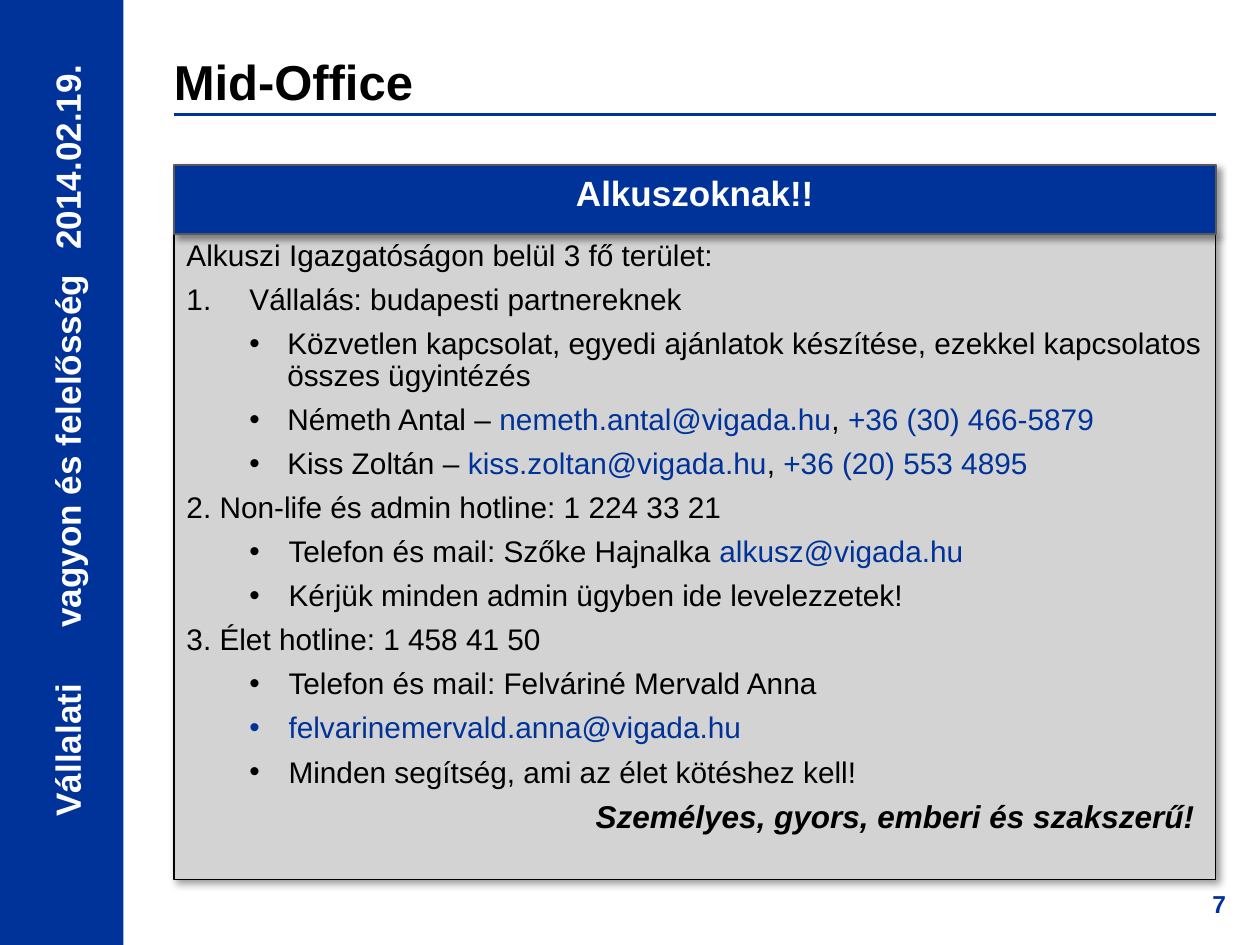
from lxml import etree
from pptx import Presentation
from pptx.dml.color import RGBColor
from pptx.enum.shapes import MSO_CONNECTOR, MSO_SHAPE
from pptx.enum.text import MSO_ANCHOR, MSO_AUTO_SIZE, PP_ALIGN
from pptx.oxml.ns import qn
from pptx.util import Inches, Pt

LEFT, CENTER, RIGHT = PP_ALIGN.LEFT, PP_ALIGN.CENTER, PP_ALIGN.RIGHT
TOP, MIDDLE = MSO_ANCHOR.TOP, MSO_ANCHOR.MIDDLE
COLORS = {"blue": "003399", "white": "FFFFFF", "black": "000000",
          "panel": "D3D3D3", "edge": "595959"}
FONT = "Arial"

TITLE = "Mid-Office"
SIDEBAR = "Vállalati\tvagyon és felelősség\t2014.02.19."
HEADER = "Alkuszoknak!!"
PAGE = "7"
CLOSING = "Személyes, gyors, emberi és szakszerű! "
# Each line: bullet indent (0 for none), then runs; odd runs are contacts.
LINES = [
    (0, ["Alkuszi Igazgatóságon belül 3 fő terület:"]),
    (0, ["1.\tVállalás: budapesti partnereknek"]),
    (0.8, ["Közvetlen kapcsolat, egyedi ajánlatok készítése, ezekkel "
           "kapcsolatos összes ügyintézés"]),
    (0.8, ["Németh Antal – ", "nemeth.antal@vigada.hu", ", ", "+36 (30) 466-5879"]),
    (0.8, ["Kiss Zoltán – ", "kiss.zoltan@vigada.hu", ", ", "+36 (20) 553 4895"]),
    (0, ["2. Non-life és admin hotline: 1 224 33 21"]),
    (0.81, ["Telefon és mail: Szőke Hajnalka ", "alkusz@vigada.hu"]),
    (0.81, ["Kérjük minden admin ügyben ide levelezzetek!"]),
    (0, ["3. Élet hotline: 1 458 41 50"]),
    (0.81, ["Telefon és mail: Felváriné Mervald Anna"]),
    (0.81, ["", "felvarinemervald.anna@vigada.hu"]),
    (0.81, ["Minden segítség, ami az élet kötéshez kell!"]),
]

CONTENT_LEFT, CONTENT_WIDTH = 1.38, 8.27
HEADER_TOP, HEADER_HEIGHT, PANEL_HEIGHT = 1.31, 0.55, 5.12


def rgb(name):
    return RGBColor.from_string(COLORS[name])


def place(shape, left, top, width, height):
    shape.left, shape.top = Inches(left), Inches(top)
    shape.width, shape.height = Inches(width), Inches(height)


def paint(shape, fill, edge=None, weight=0):
    shape.fill.solid()
    shape.fill.fore_color.rgb = rgb(fill)
    if edge:
        shape.line.color.rgb = rgb(edge)
        shape.line.width = Pt(weight)
    else:
        shape.line.fill.background()


def cast_shadow(shape):
    effects = etree.SubElement(shape._element.spPr, qn("a:effectLst"))
    shadow = etree.SubElement(effects, qn("a:outerShdw"), blurRad=str(Pt(4)),
                              dist=str(Pt(3)), dir=str(45 * 60000),
                              algn="tl", rotWithShape="0")
    tint = etree.SubElement(shadow, qn("a:srgbClr"), val=COLORS["black"])
    etree.SubElement(tint, qn("a:alpha"), val="40000")


def set_layout(paragraph, margin=0, hanging=0, bullet=False, tabs=()):
    props = paragraph._p.get_or_add_pPr()
    props.set("marL", str(Inches(margin)))
    props.set("indent", str(-Inches(hanging)))
    if bullet:
        etree.SubElement(props, qn("a:buFont"), typeface=FONT)
        etree.SubElement(props, qn("a:buChar"), char="•")
    else:
        etree.SubElement(props, qn("a:buNone"))
    if tabs:
        stops = etree.SubElement(props, qn("a:tabLst"))
        for stop in tabs:
            etree.SubElement(stops, qn("a:tab"), pos=str(Inches(stop)), algn="l")


def set_font(paragraph, size, color=None, bold=False, italic=False):
    font = paragraph.font
    font.name, font.size, font.bold, font.italic = FONT, Pt(size), bold, italic
    if color:
        font.color.rgb = rgb(color)


def write(shape, text, size, color, align, anchor, tabs=()):
    frame = shape.text_frame
    frame.word_wrap = True
    frame.auto_size = MSO_AUTO_SIZE.NONE
    frame.vertical_anchor = anchor
    paragraph = frame.paragraphs[0]
    paragraph.add_run().text = text
    paragraph.alignment = align
    set_layout(paragraph, tabs=tabs)
    set_font(paragraph, size, color, bold=True)


def space(paragraph, size, first=False):
    paragraph.line_spacing = 0.9
    paragraph.space_before = Pt(0 if first else size * 0.2)
    paragraph.space_after = Pt(size * 0.2)


def fill_panel(frame):
    frame.word_wrap = True
    frame.auto_size = MSO_AUTO_SIZE.NONE
    frame.vertical_anchor = TOP
    for index, (margin, runs) in enumerate(LINES):
        paragraph = frame.add_paragraph() if index else frame.paragraphs[0]
        tabs = [0.33] if "\t" in runs[0] else []
        set_layout(paragraph, margin, margin and margin - 0.5, bool(margin), tabs)
        space(paragraph, 17, first=index == 0)
        set_font(paragraph, 17)
        for position, text in enumerate(runs):
            if text:
                run = paragraph.add_run()
                run.text = text
                run.font.color.rgb = rgb("blue" if position % 2 else "black")
    closing = frame.add_paragraph()
    closing.add_run().text = CLOSING
    closing.alignment = RIGHT
    set_layout(closing)
    space(closing, 18)
    set_font(closing, 18, "black", bold=True, italic=True)


def main():
    deck = Presentation()
    deck.slide_width, deck.slide_height = Inches(10), Inches(7.5)
    slide = deck.slides.add_slide(deck.slide_layouts[1])
    shapes = slide.shapes

    title = shapes.title
    place(title, 1.28, 0.36, 7.42, 0.79)
    write(title, TITLE, 28, "black", LEFT, TOP)

    panel = slide.placeholders[1]
    place(panel, CONTENT_LEFT, HEADER_TOP + HEADER_HEIGHT, CONTENT_WIDTH, PANEL_HEIGHT)
    paint(panel, "panel", "black", 0.75)
    cast_shadow(panel)
    fill_panel(panel.text_frame)

    band = shapes.add_shape(MSO_SHAPE.RECTANGLE, 0, 0, Inches(0.98), deck.slide_height)
    paint(band, "blue")
    band.shadow.inherit = False

    sidebar = shapes.add_textbox(0, 0, 0, 0)
    place(sidebar, -2.92, 3.36, 6.9, 0.44)
    sidebar.rotation = 270
    write(sidebar, SIDEBAR, 20, "white", LEFT, MIDDLE, tabs=[1.21, 4.33])
    sidebar.text_frame.margin_left = Inches(0.55)

    rule = shapes.add_connector(MSO_CONNECTOR.STRAIGHT, Inches(CONTENT_LEFT), Inches(0.91),
                                Inches(CONTENT_LEFT + CONTENT_WIDTH), Inches(0.91))
    rule.line.color.rgb = rgb("blue")
    rule.line.width = Pt(1.5)
    etree.SubElement(rule._element.spPr, qn("a:effectLst"))

    header = shapes.add_shape(MSO_SHAPE.RECTANGLE, 0, 0, 0, 0)
    place(header, CONTENT_LEFT, HEADER_TOP, CONTENT_WIDTH, HEADER_HEIGHT)
    paint(header, "blue", "edge", 1.25)
    cast_shadow(header)
    write(header, HEADER, 20, "white", CENTER, TOP)

    page = shapes.add_textbox(0, 0, 0, 0)
    place(page, 7.47, 6.92, 2.36, 0.5)
    write(page, PAGE, 14, "blue", RIGHT, MIDDLE)

    deck.save("out.pptx")


if __name__ == "__main__":
    main()
